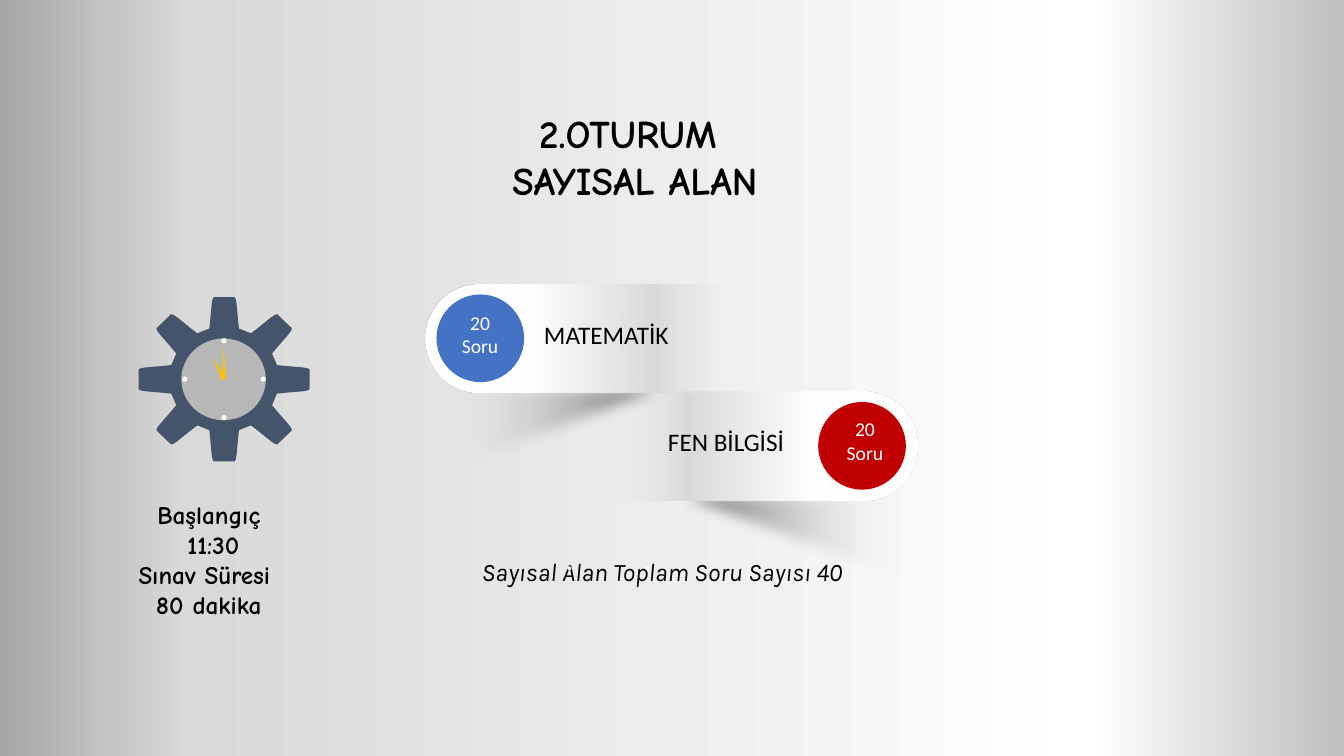
"""Build the slide on the second exam session: numerical subjects, timing and question counts."""
from dataclasses import dataclass
from math import cos, pi, sin

from lxml.etree import SubElement
from pptx import Presentation
from pptx.dml.color import RGBColor
from pptx.enum.shapes import MSO_SHAPE
from pptx.enum.text import MSO_ANCHOR, MSO_AUTO_SIZE, PP_ALIGN
from pptx.oxml.ns import qn
from pptx.util import Cm, Pt


@dataclass(frozen=True)
class Theme:
    ink: str = "000000"
    white: str = "FFFFFF"
    blue: str = "4472C4"
    red: str = "C00000"
    gear: str = "44546A"
    face: str = "B7B7B7"
    hand: str = "FFC000"
    backdrop: tuple = ((0, "BFBFBF", 100), (19, "FFFFFF", 100), (86, "D9D9D9", 100), (100, "A6A6A6", 100))
    ribbon: tuple = ((33, "FFFFFF", 100), (72, "D9D9D9", 100), (100, "F1F1F1", 0))
    shade: tuple = ((0, "FFFFFF", 0), (95, "000000", 100))
    heading: tuple = ("Comic Neue", 28, True, False)
    timing: tuple = ("Comic Neue", 18, True, False)
    total: tuple = ("Karla", 18, False, True)
    subject: tuple = ("Calibri", 18, False, False)
    count: tuple = ("Calibri", 14, False, False)


def paint_gradient(fill, element, stops, angle):
    fill.gradient()
    gradient = next(element.iter(qn("a:gradFill")))
    gradient.find(qn("a:lin")).set("ang", str(angle * 60000))
    stop_list = gradient.find(qn("a:gsLst"))
    for old_stop in list(stop_list):
        stop_list.remove(old_stop)
    for position, colour, opacity in stops:
        stop = SubElement(stop_list, qn("a:gs"), pos=str(position * 1000))
        tone = SubElement(stop, qn("a:srgbClr"), val=colour)
        if opacity < 100:
            SubElement(tone, qn("a:alpha"), val=str(opacity * 1000))


def write(holder, box, text, style, colour, align=PP_ALIGN.CENTER):
    holder.left, holder.top, holder.width, holder.height = map(Cm, box)
    frame = holder.text_frame
    frame.word_wrap = True
    frame.auto_size = MSO_AUTO_SIZE.NONE
    frame.vertical_anchor = MSO_ANCHOR.TOP
    frame.text = text
    for paragraph in frame.paragraphs:
        paragraph.alignment = align
        for run in paragraph.runs:
            font = run.font
            font.name, size, font.bold, font.italic = style
            font.size = Pt(size)
            font.color.rgb = RGBColor.from_string(colour)


theme = Theme()
deck = Presentation()
deck.slide_width, deck.slide_height = Cm(33.87), Cm(19.05)
slide = deck.slides.add_slide(deck.slide_layouts[5])
shapes = slide.shapes
paint_gradient(slide.background.fill, slide.element, theme.backdrop, 180)

ribbons = [
    ((15.11, 12.19), ("flipH", "flipV"), (17.75, 7.24), 90, ("flipH",)),
    ((10.72, 9.5), ("flipV",), (13.36, 4.52), 270, ()),
]
for shade_corner, shade_flips, ribbon_corner, ribbon_turn, ribbon_flips in ribbons:
    layers = [
        (MSO_SHAPE.RIGHT_TRIANGLE, shade_corner, (8, 2.97), 0, shade_flips, theme.shade, 0),
        (MSO_SHAPE.ROUND_2_SAME_RECTANGLE, ribbon_corner, (2.72, 8), ribbon_turn, ribbon_flips, theme.ribbon, 90),
    ]
    for kind, corner, size, turn, flips, stops, angle in layers:
        layer = shapes.add_shape(kind, *map(Cm, corner + size))
        layer.shadow.inherit = False
        layer.line.fill.background()
        layer.rotation = turn
        paint_gradient(layer.fill, layer.element, stops, angle)
        for flip in flips:
            layer.element.spPr.find(qn("a:xfrm")).set(flip, "1")
        if kind == MSO_SHAPE.RIGHT_TRIANGLE:
            effects = layer.element.spPr.find(qn("a:effectLst"))
            SubElement(effects, qn("a:softEdge"), rad=str(Cm(0.35)))
        else:
            layer.adjustments[0], layer.adjustments[1] = 0.5, 0

write(shapes.title, (7.34, 2.62, 17.32, 2.64), "2.OTURUM \nSAYISAL ALAN", theme.heading, theme.ink)
write(shapes.add_textbox(0, 0, 0, 0), (10.54, 13.89, 12.29, 1.02),
      "Sayısal Alan Toplam Soru Sayısı 40", theme.total, theme.ink)
write(shapes.add_textbox(0, 0, 0, 0), (2.18, 12.45, 6.17, 3.33),
      "Başlangıç\n 11:30\nSınav Süresi \n80 dakika", theme.timing, theme.ink)

centre_x, centre_y, stretch = 5.65, 9.56, 1.04
half_tooth = [(0.36, 1.28), (0.34, 1.46), (0.3, 1.91), (0.28, 2.02), (0.25, 2.07)]
tooth = [(-across, out) for across, out in half_tooth] + half_tooth[::-1]
outline = []
for step in range(8):
    turn = step * pi / 4
    for across, out in tooth:
        x = across * cos(turn) + out * sin(turn)
        y = across * sin(turn) - out * cos(turn)
        outline.append((Cm(centre_x + stretch * x), Cm(centre_y + y)))
builder = shapes.build_freeform(*outline[0])
builder.add_line_segments(outline[1:], close=True)
gear = builder.convert_to_shape()
gear.shadow.inherit = False
gear.fill.solid()
gear.fill.fore_color.rgb = RGBColor.from_string(theme.gear)
gear.line.fill.background()

solids = [
    (MSO_SHAPE.OVAL, (11, 7.42, 2.21, 2.21), 0, theme.blue),
    (MSO_SHAPE.OVAL, (20.62, 10.13, 2.21, 2.21), 0, theme.red),
    (MSO_SHAPE.OVAL, (4.57, 8.53, 2.13, 2.06), 0, theme.face),
    (MSO_SHAPE.ISOSCELES_TRIANGLE, (5.59, 8.71, 0.1, 0.84), 0, theme.hand),
    (MSO_SHAPE.ISOSCELES_TRIANGLE, (5.44, 8.94, 0.1, 0.66), 333, theme.hand),
    (MSO_SHAPE.OVAL, (16.26, 14.27, 0.1, 0.1), 0, theme.white),
    (MSO_SHAPE.OVAL, (14.3, 14.27, 0.1, 0.1), 0, theme.white),
]
for across, down in [(0, -0.97), (0.99, 0), (0, 0.97), (-0.99, 0)]:
    mark_box = (centre_x + across - 0.07, centre_y + down - 0.07, 0.13, 0.13)
    solids.append((MSO_SHAPE.OVAL, mark_box, 0, theme.white))
for kind, box, turn, colour in solids:
    solid = shapes.add_shape(kind, *map(Cm, box))
    solid.shadow.inherit = False
    solid.rotation = turn
    solid.fill.solid()
    solid.fill.fore_color.rgb = RGBColor.from_string(colour)
    solid.line.fill.background()

subjects = [
    ("MATEMATİK", (13.46, 7.92, 3.94, 1.02), PP_ALIGN.LEFT, (10.87, 7.7, 2.46, 1.45)),
    ("FEN BİLGİSİ", (15.62, 10.62, 4.39, 1.02), PP_ALIGN.RIGHT, (20.57, 10.39, 2.46, 1.45)),
]
for subject, subject_box, align, count_box in subjects:
    write(shapes.add_textbox(0, 0, 0, 0), subject_box, subject, theme.subject, theme.ink, align)
    write(shapes.add_textbox(0, 0, 0, 0), count_box, "20\nSoru", theme.count, theme.white)

deck.save("out.pptx")
